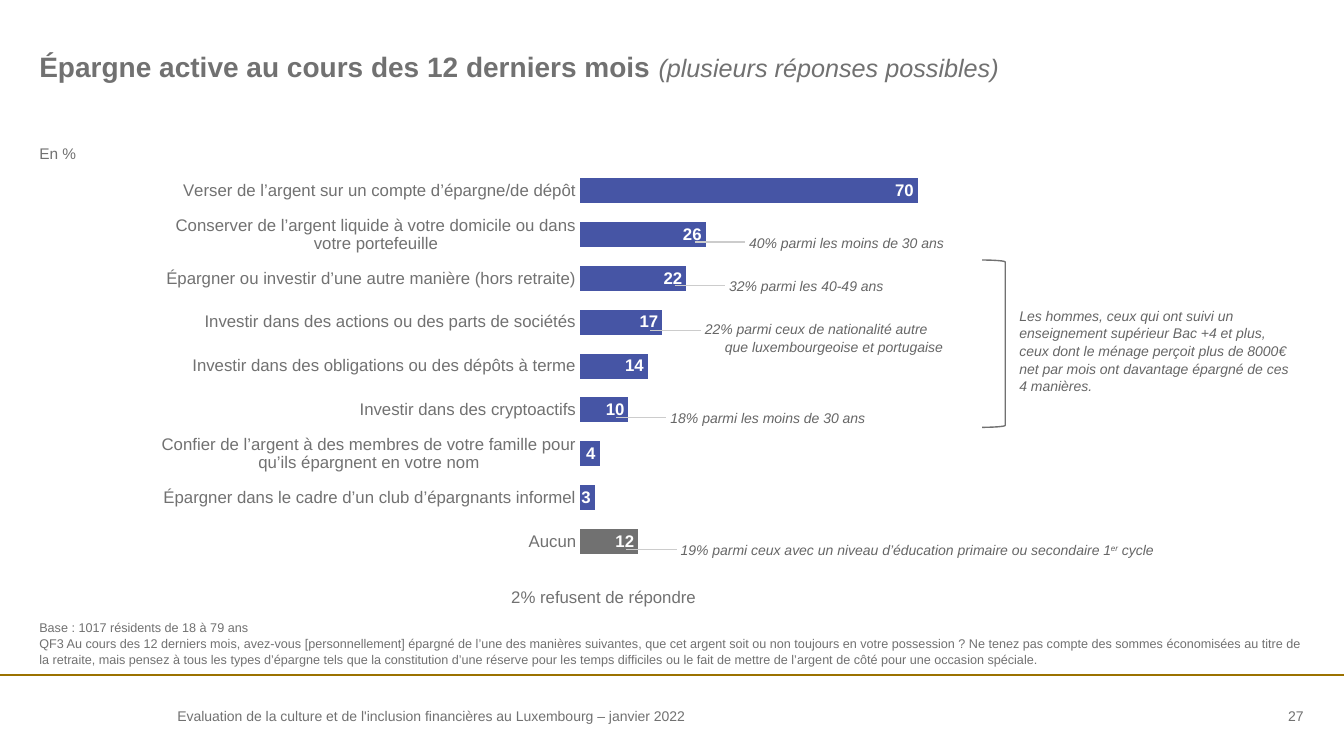
from dataclasses import dataclass

import lxml.etree
import pptx
import pptx.chart.data
import pptx.dml.color
import pptx.enum.chart
import pptx.enum.shapes
import pptx.enum.text
import pptx.oxml
import pptx.oxml.ns
import pptx.util

Inches, Pt = pptx.util.Inches, pptx.util.Pt
Anchor = pptx.enum.text.MSO_ANCHOR
Align = pptx.enum.text.PP_ALIGN

FONT = "Arial"
GREY, NOTE_GREY, LEADER_GREY = "717171", "666666", "CCCCCC"
BLUE, WHITE, GOLD = "4655A5", "FFFFFF", "9B7200"
LEFT, FULL_WIDTH = 0.39, 12.54
LEADER_LENGTH = 0.5
NO_INSETS = (0, 0, 0, 0)
NOTE_INSETS = (0.04, 0.04, 0.08, 0.04)


@dataclass
class Words:
    text: str
    size: float
    color: str = GREY
    bold: bool = False
    italic: bool = False
    baseline: int = 0


@dataclass
class Block:
    box: tuple[float, float, float, float]
    paragraphs: list[list[Words]]
    insets: tuple[float, float, float, float] = NO_INSETS
    anchor: Anchor = Anchor.TOP
    align: Align = Align.LEFT
    hanging: float = 0


@dataclass
class Callout:
    words: list[Words]
    left: float
    line_y: float
    width: float
    height: float = 0.25
    rise: float = 0.125  # distance from the box top to the leader line


def rgb(color: str) -> pptx.dml.color.RGBColor:
    return pptx.dml.color.RGBColor.from_string(color)


def set_font(font, size: float, color: str, bold: bool = False, italic: bool = False) -> None:
    font.name, font.size = FONT, Pt(size)
    font.bold, font.italic = bold, italic
    font.color.rgb = rgb(color)


def note(text: str, baseline: int = 0) -> Words:
    return Words(text, 10, NOTE_GREY, italic=True, baseline=baseline)


def draw_block(slide, block: Block):
    textbox = slide.shapes.add_textbox(*map(Inches, block.box))
    frame = textbox.text_frame
    frame.word_wrap = True
    frame.vertical_anchor = block.anchor
    (frame.margin_left, frame.margin_top,
     frame.margin_right, frame.margin_bottom) = map(Inches, block.insets)
    for index, pieces in enumerate(block.paragraphs):
        paragraph = frame.add_paragraph() if index else frame.paragraphs[0]
        paragraph.alignment = block.align
        paragraph.line_spacing = 1.05
        if block.hanging:
            properties = paragraph._p.get_or_add_pPr()
            properties.set("marL", str(Inches(block.hanging)))
            properties.set("indent", str(-Inches(block.hanging)))
        for words in pieces:
            run = paragraph.add_run()
            run.text = words.text
            set_font(run.font, words.size, words.color, words.bold, words.italic)
            if words.baseline:
                run._r.get_or_add_rPr().set("baseline", str(words.baseline * 1000))
    return textbox


def draw_line(slide, left: float, right: float, y: float, color: str, width: float):
    line = slide.shapes.add_connector(
        pptx.enum.shapes.MSO_CONNECTOR.STRAIGHT,
        Inches(left), Inches(y), Inches(right), Inches(y))
    line.line.color.rgb = rgb(color)
    line.line.width = Pt(width)
    lxml.etree.SubElement(line._element.spPr, pptx.oxml.ns.qn("a:effectLst"))
    return line


def draw_callout(slide, callout: Callout) -> None:
    box = (callout.left, callout.line_y - callout.rise, callout.width, callout.height)
    remark = draw_block(slide, Block(box, [callout.words], NOTE_INSETS, hanging=0.2))
    leader = draw_line(slide, callout.left - LEADER_LENGTH, callout.left,
                       callout.line_y, LEADER_GREY, 1)
    if callout.rise * 2 == callout.height:
        leader.end_connect(remark, 1)


def draw_savings_chart(slide, answers: dict[str, int]) -> None:
    data = pptx.chart.data.CategoryChartData()
    data.categories = list(answers)
    data.add_series("Series 1", list(answers.values()))
    chart = slide.shapes.add_chart(
        pptx.enum.chart.XL_CHART_TYPE.BAR_CLUSTERED,
        *map(Inches, (1.4, 1.6, 8.66, 4.03)), data).chart
    chart.has_legend = chart.has_title = False
    set_font(chart.font, 10, GREY)

    # Axes
    answer_axis, percent_axis = chart.category_axis, chart.value_axis
    answer_axis.reverse_order = True
    answer_axis.major_tick_mark = pptx.enum.chart.XL_TICK_MARK.NONE
    answer_axis.format.line.fill.background()
    set_font(answer_axis.tick_labels.font, 12, GREY)
    percent_axis.minimum_scale, percent_axis.maximum_scale = 0, 90
    percent_axis.has_major_gridlines = False
    percent_axis.visible = False

    # Bars and their values
    plot = chart.plots[0]
    plot.gap_width = 75
    plot.vary_by_categories = False
    bars = plot.series[0]
    bars.format.fill.solid()
    bars.format.fill.fore_color.rgb = rgb(BLUE)
    none_bar = bars.points[len(answers) - 1].format.fill
    none_bar.solid()
    none_bar.fore_color.rgb = rgb(GREY)
    labels = bars.data_labels
    labels.show_value = True
    labels.position = pptx.enum.chart.XL_LABEL_POSITION.INSIDE_END
    set_font(labels.font, 12, WHITE, bold=True)

    # Inner plot area
    area = chart._chartSpace.chart.plotArea
    for layout in area.findall(pptx.oxml.ns.qn("c:layout")):
        area.remove(layout)
    settings = {"layoutTarget": "inner", "xMode": "edge", "yMode": "edge",
                "x": 0.508, "y": 0.019, "w": 0.497, "h": 0.971}
    items = "".join(f'<c:{key} val="{value}"/>' for key, value in settings.items())
    area.insert(0, pptx.oxml.parse_xml(
        f'<c:layout {pptx.oxml.ns.nsdecls("c")}>'
        f"<c:manualLayout>{items}</c:manualLayout></c:layout>"))


ANSWERS = {
    "Verser de l’argent sur un compte d’épargne/de dépôt": 70,
    "Conserver de l’argent liquide à votre domicile ou dans votre portefeuille": 26,
    "Épargner ou investir d’une autre manière (hors retraite)": 22,
    "Investir dans des actions ou des parts de sociétés": 17,
    "Investir dans des obligations ou des dépôts à terme": 14,
    "Investir dans des cryptoactifs": 10,
    "Confier de l’argent à des membres de votre famille pour qu’ils épargnent en votre nom": 4,
    "Épargner dans le cadre d’un club d’épargnants informel": 3,
    "Aucun": 12,
}

BLOCKS = [
    Block((LEFT, 0.47, FULL_WIDTH, 0.44), [[
        Words("Épargne active au cours des 12 derniers mois ", 20, bold=True),
        Words("(plusieurs réponses possibles)", 18, italic=True)]]),
    Block((LEFT, 1.42, 0.5, 0.19), [[Words("En %", 11)]]),
    Block((5.07, 5.81, 1.98, 0.2), [[Words("2% refusent de répondre", 12)]]),
    Block((10.07, 3, 2.86, 0.92), [[note(
        "Les hommes, ceux qui ont suivi un enseignement supérieur Bac +4 et plus, ceux dont "
        "le ménage perçoit plus de 8000€ net par mois ont davantage épargné de ces 4 manières.")]],
        NOTE_INSETS),
    Block((LEFT, 6.17, FULL_WIDTH, 0.45), [
        [Words("Base : 1017 résidents de 18 à 79 ans", 9)],
        [Words("QF3 Au cours des 12 derniers mois, avez-vous [personnellement] épargné de l’une des "
               "manières suivantes, que cet argent soit ou non toujours en votre possession ? Ne "
               "tenez pas compte des sommes économisées au titre de la retraite, mais pensez à tous "
               "les types d’épargne tels que la constitution d’une réserve pour les temps difficiles "
               "ou le fait de mettre de l’argent de côté pour une occasion spéciale.", 9)]],
        anchor=Anchor.BOTTOM),
    Block((1.66, 6.99, 5.35, 0.22), [[Words(
        "Evaluation de la culture et de l'inclusion financières au Luxembourg – janvier 2022", 10)]],
        (0.1, 0, 0.1, 0), Anchor.MIDDLE),
    Block((11.87, 6.99, 1.06, 0.22), [[Words("27", 10)]],
          anchor=Anchor.MIDDLE, align=Align.RIGHT),
]

CALLOUTS = [
    Callout([note("40% parmi les moins de 30 ans")], 7.39, 2.4, 2.08),
    Callout([note("32% parmi les 40-49 ans")], 7.19, 2.83, 1.72),
    Callout([note("22% parmi ceux de nationalité autre que luxembourgeoise et portugaise")],
            6.95, 3.28, 2.52, 0.42, 0.15),
    Callout([note("18% parmi les moins de 30 ans")], 6.61, 4.14, 2.08),
    Callout([note("19% parmi ceux avec un niveau d’éducation primaire ou secondaire 1"),
             note("er", 30), note(" cycle")], 6.71, 5.45, 4.94),
]


def main() -> None:
    deck = pptx.Presentation()
    deck.slide_width, deck.slide_height = Inches(13.33), Inches(7.5)
    slide = deck.slides.add_slide(deck.slide_layouts[6])
    draw_line(slide, 0, 13.33, 6.7, GOLD, 1.5)
    draw_savings_chart(slide, ANSWERS)
    for block in BLOCKS:
        draw_block(slide, block)
    for callout in CALLOUTS:
        draw_callout(slide, callout)

    # Bracket around the four ways of saving
    bracket = slide.shapes.add_shape(pptx.enum.shapes.MSO_SHAPE.RIGHT_BRACKET,
                                     *map(Inches, (9.74, 2.58, 0.23, 1.66)))
    bracket.shadow.inherit = False
    bracket.fill.background()
    bracket.line.color.rgb = rgb(GREY)
    bracket.line.width = Pt(1)

    deck.save("out.pptx")


if __name__ == "__main__":
    main()
